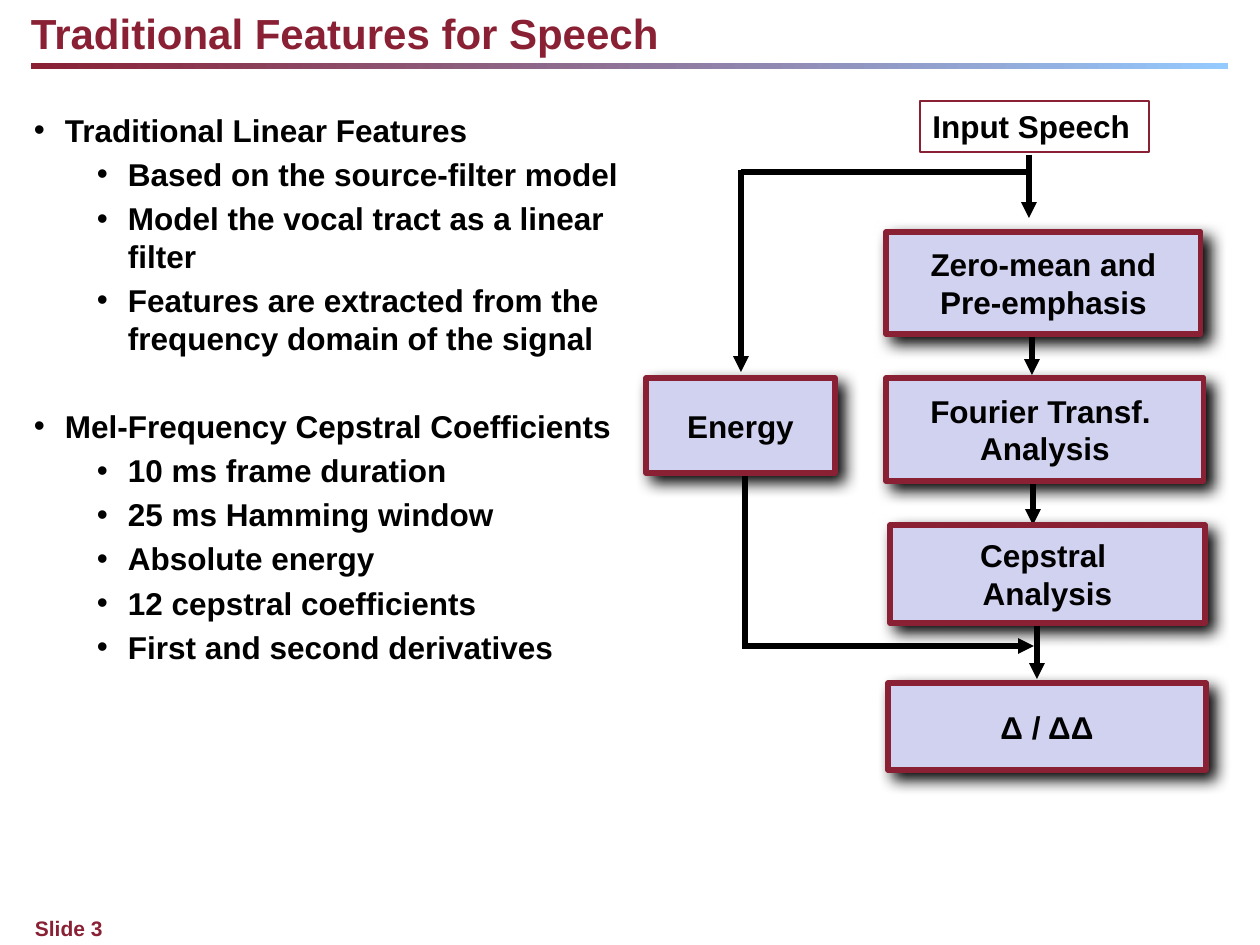
from pptx import Presentation
from pptx.dml.color import RGBColor
from pptx.enum.shapes import MSO_CONNECTOR as Connector, MSO_SHAPE as Shape
from pptx.enum.text import MSO_ANCHOR as Anchor, PP_ALIGN as Align
from pptx.oxml.ns import qn
from pptx.util import Emu, Pt
from lxml.etree import SubElement

PX = 914400 // 126
COLORS = {"maroon": "892034", "sky": "95CAFF", "lavender": "D1D1F0", "black": "000000"}
FONT = "Arial"

OUTLINE = [
    ("Traditional Linear Features", [
        "Based on the source-filter model",
        "Model the vocal tract as a linear filter",
        "Features are extracted from the frequency domain of the signal",
    ]),
    ("Mel-Frequency Cepstral Coefficients", [
        "10 ms frame duration",
        "25 ms Hamming window",
        "Absolute energy",
        "12 cepstral coefficients",
        "First and second derivatives",
    ]),
]

# Left, top, width, height and lines of text
STAGES = [
    (886, 378, 318, 103, ["Fourier Transf. ", "Analysis"]),
    (890, 525, 315, 98, ["Cepstral ", "Analysis"]),
    (886, 232, 315, 102, ["Zero-mean and", "Pre-emphasis"]),
    (646, 378, 189, 95, ["Energy"]),
    (888, 683, 318, 87, ["Δ / ΔΔ"]),
]

# Start, end and whether there is an arrowhead
FLOWS = [
    ((1037, 597), (1037, 679), True),
    ((1029, 155), (1029, 218), True),
    ((1032, 319), (1032, 375), True),
    ((741, 172), (1028, 172), False),
    ((741, 170), (741, 372), True),
    ((1033, 472), (1033, 525), True),
    ((745, 460), (745, 649), False),
    ((743, 646), (1034, 646), True),
]


def px(*lengths):
    return [Emu(length * PX) for length in lengths]


def color(name):
    return RGBColor.from_string(COLORS[name])


def add_run(para, text, size=18, ink="black"):
    span = para.add_run()
    span.text = text
    font = span.font
    font.name, font.size, font.bold = FONT, Pt(size), True
    font.color.rgb = color(ink)


def add_textbox(page, left, top, width, height, margin=0):
    box = page.shapes.add_textbox(*px(left, top, width, height))
    frame = box.text_frame
    frame.word_wrap = True
    if margin == 0:
        frame.margin_left = frame.margin_right = 0
        frame.margin_top = frame.margin_bottom = 0
    return box


def add_label(page, bounds, text, size):
    box = add_textbox(page, *bounds)
    add_run(box.text_frame.paragraphs[0], text, size, "maroon")


def add_bullet(para, text, level, space):
    para.level = level
    para.space_before = Pt(space)
    props = para._p.get_or_add_pPr()
    props.set("marL", str(63 * (1 + 2 * level) // 2 * PX))
    props.set("indent", str(-31 * PX))
    SubElement(props, qn("a:buFont"), typeface=FONT)
    SubElement(props, qn("a:buChar"), char="•")
    add_run(para, text)


def add_outline(page):
    frame = add_textbox(page, 34, 111, 620, 572).text_frame
    for group, (heading, points) in enumerate(OUTLINE):
        para = frame.add_paragraph() if group else frame.paragraphs[0]
        add_bullet(para, heading, 0, 28.8 if group else 0)
        for point in points:
            add_bullet(frame.add_paragraph(), point, 1, 3.6)


def add_rule(page):
    bar = page.shapes.add_shape(Shape.RECTANGLE, *px(31, 63, 1197, 6))
    bar.shadow.inherit = False
    bar.line.fill.background()
    bar.fill.gradient()
    bar.fill.gradient_angle = 0
    for stop, name in zip(bar.fill.gradient_stops, ("maroon", "sky")):
        stop.color.rgb = color(name)


def add_flow(page, start, end, arrow):
    link = page.shapes.add_connector(Connector.STRAIGHT, *px(*start, *end))
    link.line.color.rgb = color("black")
    link.line.width = Pt(3)
    if arrow:
        SubElement(link.line._get_or_add_ln(), qn("a:tailEnd"), type="triangle")
    SubElement(link._element.spPr, qn("a:effectLst"))


def add_stage(page, left, top, width, height, lines):
    box = page.shapes.add_shape(Shape.RECTANGLE, *px(left, top, width, height))
    box.fill.solid()
    box.fill.fore_color.rgb = color("lavender")
    box.line.color.rgb = color("maroon")
    box.line.width = Pt(3)
    # Drop shadow towards the lower right
    box.shadow.inherit = False
    effects = box._element.spPr.find(qn("a:effectLst"))
    shadow = SubElement(effects, qn("a:outerShdw"), blurRad=str(Pt(9)),
                        dist=str(Pt(6)), dir="2700000", algn="tl", rotWithShape="0")
    SubElement(shadow, qn("a:srgbClr"), val=COLORS["black"])
    frame = box.text_frame
    frame.word_wrap = False
    frame.vertical_anchor = Anchor.MIDDLE
    for index, line in enumerate(lines):
        para = frame.add_paragraph() if index else frame.paragraphs[0]
        para.alignment = Align.CENTER
        add_run(para, line)


def add_input(page):
    box = add_textbox(page, 920, 101, 229, 51, margin=None)
    box.line.color.rgb = color("maroon")
    box.line.width = Pt(0.75)
    add_run(box.text_frame.paragraphs[0], "Input Speech")


def main():
    deck = Presentation()
    deck.slide_width, deck.slide_height = px(1260, 945)
    page = deck.slides.add_slide(deck.slide_layouts[6])

    # Header and footer
    add_rule(page)
    add_label(page, (35, 916, 1124, 25), "Slide 3", 12)
    add_label(page, (31, 8, 945, 50), "Traditional Features for Speech", 24)

    # Flow chart, with the lines behind the boxes
    for flow in FLOWS:
        add_flow(page, *flow)
    add_input(page)
    for stage in STAGES:
        add_stage(page, *stage)

    # Bulleted text
    add_outline(page)
    deck.save("out.pptx")


if __name__ == "__main__":
    main()
